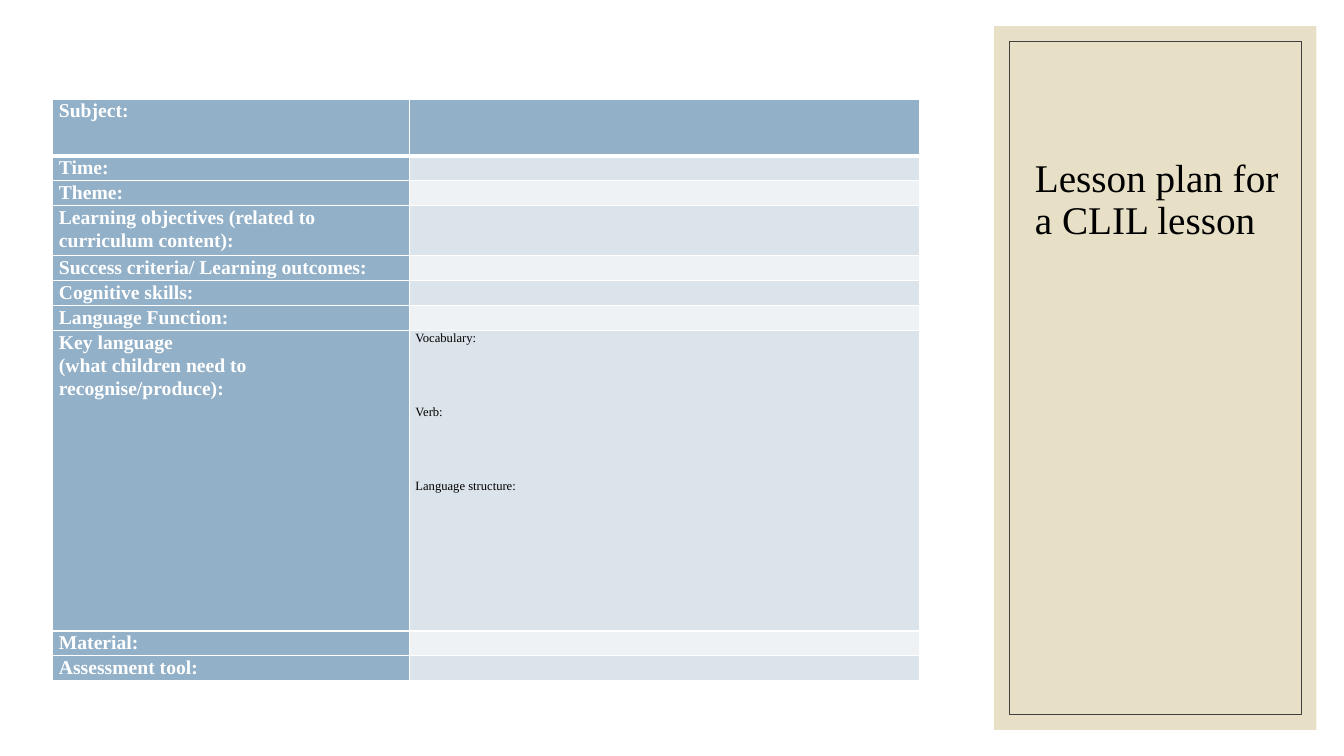
from lxml.etree import SubElement
from pptx import Presentation
from pptx.dml.color import RGBColor
from pptx.enum.shapes import MSO_SHAPE as Preset
from pptx.enum.text import MSO_ANCHOR as Anchor
from pptx.oxml.ns import qn
from pptx.util import Pt

WHITE = RGBColor(0xFF, 0xFF, 0xFF)
BLACK = RGBColor(0x00, 0x00, 0x00)
SAND = RGBColor(0xE7, 0xE0, 0xC7)
CHARCOAL = RGBColor(0x40, 0x40, 0x40)
STEEL = RGBColor(0x92, 0xB0, 0xC8)
BAND_DARK = RGBColor(0xDC, 0xE4, 0xEB)
BAND_LIGHT = RGBColor(0xEE, 0xF2, 0xF5)

LINE_HEIGHT = 16.4
PLAN_ROWS = [
    ("Subject:", 40.6),
    ("Time:", LINE_HEIGHT),
    ("Theme:", LINE_HEIGHT),
    ("Learning objectives (related to curriculum content):", 2 * LINE_HEIGHT),
    ("Success criteria/ Learning outcomes:", LINE_HEIGHT),
    ("Cognitive skills:", LINE_HEIGHT),
    ("Language Function:", LINE_HEIGHT),
    ("Key language\n(what children need to recognise/produce):", 214.6),
    ("Material:", LINE_HEIGHT),
    ("Assessment tool:", LINE_HEIGHT),
]
KEY_LANGUAGE_ROW = 7
KEY_LANGUAGE = "Vocabulary:\nVerb:\nLanguage structure:"
COLUMN_WIDTHS = (254.7, 364.3)


class LessonSlide:
    font_name = "Times New Roman"

    def __init__(self, deck):
        self.slide = deck.slides.add_slide(deck.slide_layouts[6])

    def set_text(self, frame, text, size, color, bold=False, spacing=1.06, gap=0):
        frame.text = text
        for index, paragraph in enumerate(frame.paragraphs):
            paragraph.line_spacing = spacing
            paragraph.space_before = Pt(gap if index else 0)
            font = paragraph.font
            font.name, font.size, font.bold = self.font_name, Pt(size), bold
            font.color.rgb = color

    def rectangle(self, left, top, width, height, fill=None, line=None):
        box = self.slide.shapes.add_shape(
            Preset.RECTANGLE, Pt(left), Pt(top), Pt(width), Pt(height))
        box.shadow.inherit = False
        if fill is None:
            box.fill.background()
        else:
            box.fill.solid()
            box.fill.fore_color.rgb = fill
        if line is None:
            box.line.fill.background()
        else:
            box.line.color.rgb = line
            box.line.width = Pt(0.5)

    def title(self, text, left, top, width, height):
        frame = self.slide.shapes.add_textbox(
            Pt(left), Pt(top), Pt(width), Pt(height)).text_frame
        frame.word_wrap = True
        frame.vertical_anchor = Anchor.BOTTOM
        self.set_text(frame, text, 28, BLACK, spacing=0.9)

    def borders(self, cell, top, bottom):
        properties = cell._tc.get_or_add_tcPr()
        for side, width in (("L", 1), ("R", 1), ("T", top), ("B", bottom)):
            edge = SubElement(properties, qn(f"a:ln{side}"), w=str(Pt(width)))
            paint = SubElement(edge, qn("a:solidFill"))
            SubElement(paint, qn("a:srgbClr"), val=str(WHITE))

    def cell(self, cell, row, fill):
        cell.margin_left = cell.margin_right = Pt(4.5)
        cell.margin_top = cell.margin_bottom = 0
        self.borders(cell, 3 if row == 1 else 1, 3 if row == 0 else 1)
        cell.fill.solid()
        cell.fill.fore_color.rgb = fill

    def plan(self, left, top):
        height = sum(row_height for _, row_height in PLAN_ROWS)
        table = self.slide.shapes.add_table(
            len(PLAN_ROWS), 2, Pt(left), Pt(top),
            Pt(sum(COLUMN_WIDTHS)), Pt(height)).table
        for column, width in zip(table.columns, COLUMN_WIDTHS):
            column.width = Pt(width)
        for row, (label, row_height) in enumerate(PLAN_ROWS):
            table.rows[row].height = Pt(row_height)
            heading, answer = table.cell(row, 0), table.cell(row, 1)
            band = BAND_DARK if row % 2 else BAND_LIGHT
            self.cell(heading, row, STEEL)
            self.cell(answer, row, band if row else STEEL)
            self.set_text(heading.text_frame, label, 14, WHITE, bold=True)
            content = KEY_LANGUAGE if row == KEY_LANGUAGE_ROW else ""
            self.set_text(answer.text_frame, content, 9, BLACK, gap=42.3)


def main():
    deck = Presentation()
    deck.slide_width, deck.slide_height = Pt(960), Pt(540)
    lesson = LessonSlide(deck)
    lesson.rectangle(710, 18.7, 230.4, 502.6, fill=SAND)
    lesson.rectangle(720.8, 29.5, 208.8, 481, line=CHARCOAL)
    lesson.title("Lesson plan for a CLIL lesson", 732.2, 47.5, 191.5, 129.6)
    lesson.plan(37.6, 70.7)
    deck.save("out.pptx")


if __name__ == "__main__":
    main()
